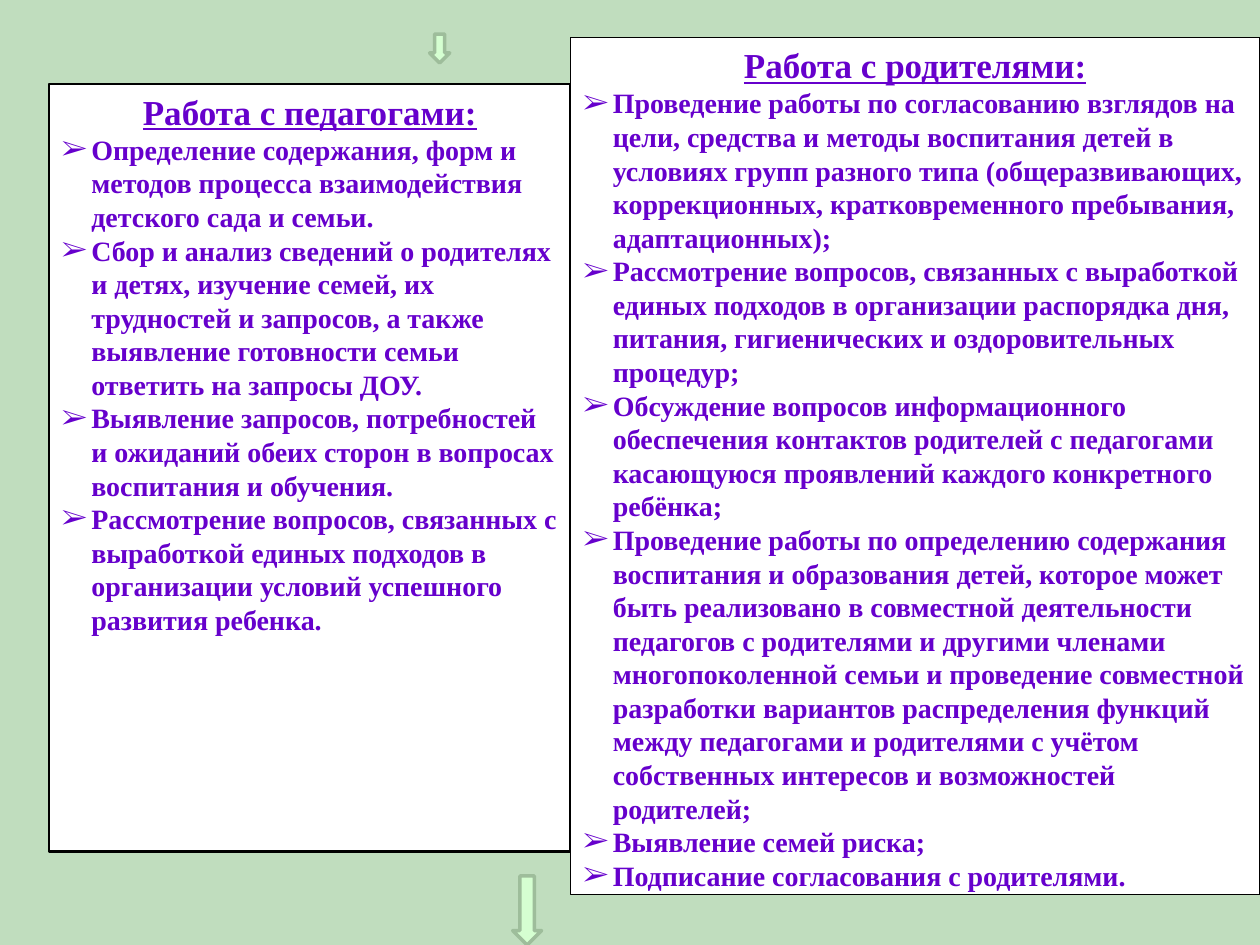
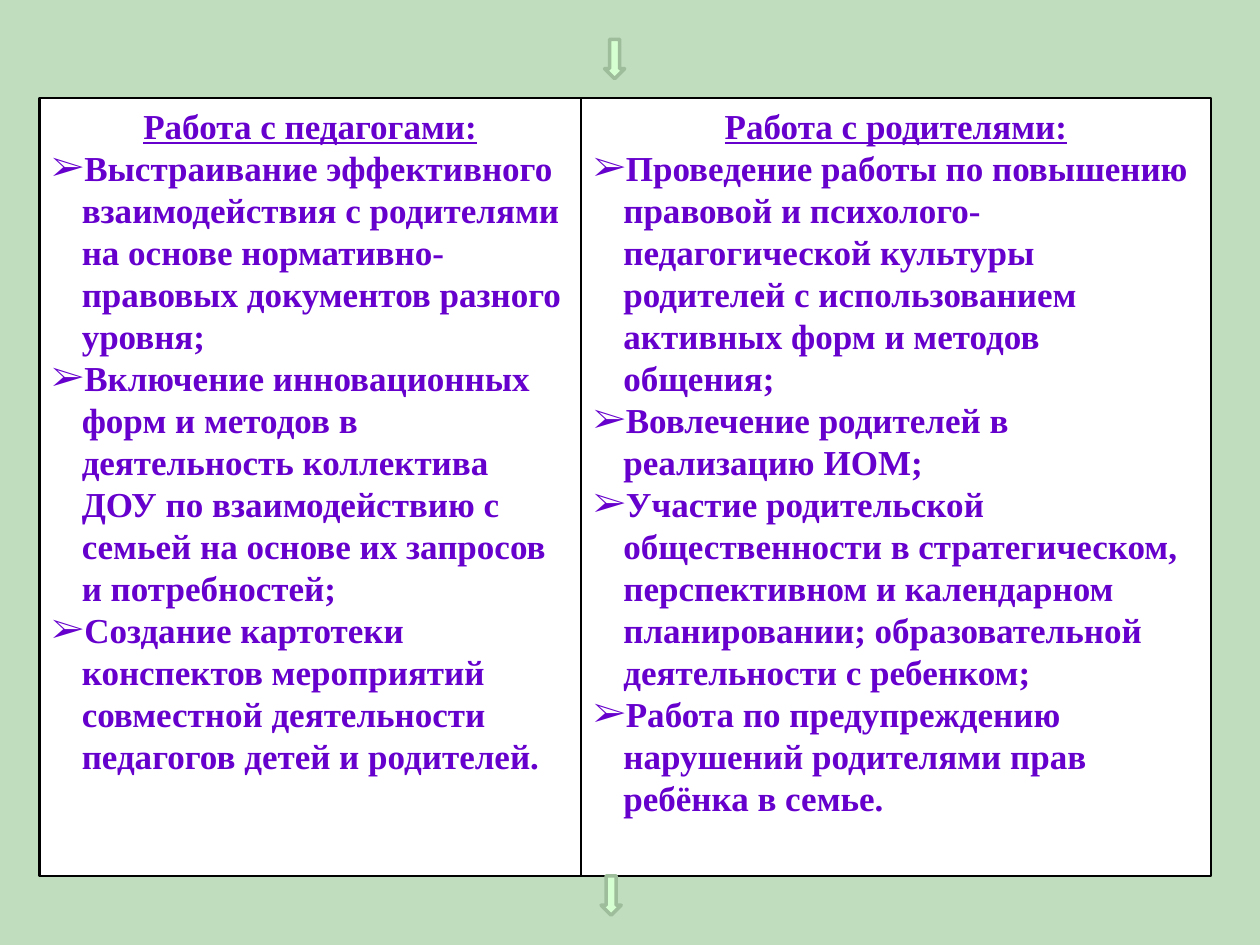
import pptx
import pptx.util
import pptx.dml.color
import pptx.enum.shapes
import pptx.enum.text
import lxml.etree
from pptx.oxml.ns import qn

Pt = pptx.util.Pt
RGBColor = pptx.dml.color.RGBColor
PP_ALIGN = pptx.enum.text.PP_ALIGN

BACKGROUND = RGBColor(0xC0, 0xDD, 0xBE)
WHITE = RGBColor(0xFF, 0xFF, 0xFF)
BLACK = RGBColor(0, 0, 0)
PURPLE = RGBColor(0x66, 0x00, 0xCC)
ARROW_FILL = RGBColor(0xD5, 0xFF, 0xD1)
ARROW_LINE = RGBColor(0x9E, 0xBD, 0x9B)

TEACHERS = "Работа с педагогами:"
PARENTS = "Работа с родителями:"
BULLET = "➢"
INDENT = Pt(17)
TEXT_FONT = {"name": "Times New Roman", "bold": True}
HEADING_FONT = {**TEXT_FONT, "size": Pt(20), "underline": True}
FRAME_FORMAT = {
    "margin_left": Pt(7.2), "margin_right": Pt(7.2),
    "margin_top": Pt(3.6), "margin_bottom": Pt(3.6),
    "word_wrap": True,
    "auto_size": pptx.enum.text.MSO_AUTO_SIZE.NONE,
    "vertical_anchor": pptx.enum.text.MSO_ANCHOR.TOP,
}
PARAGRAPH_FORMAT = {"space_before": Pt(0), "space_after": Pt(0), "line_spacing": 1.0}

SLIDES = [
    {
        "size": 16,
        "panels": [
            {"heading": TEACHERS, "box": (28, 48, 298, 438.5), "border": 1.5, "items": [
                "Определение содержания, форм и методов процесса взаимодействия детского сада и семьи.",
                "Сбор и анализ сведений о родителях и детях, изучение семей, их трудностей и запросов, "
                "а также выявление готовности семьи ответить на запросы ДОУ.",
                "Выявление запросов, потребностей и ожиданий обеих сторон в вопросах воспитания и обучения.",
                "Рассмотрение вопросов, связанных с выработкой единых подходов в организации условий "
                "успешного развития ребенка.",
            ]},
            {"heading": PARENTS, "box": (326, 21.5, 394, 489.5), "border": 0.75, "items": [
                "Проведение работы по согласованию взглядов на цели, средства и методы воспитания детей "
                "в условиях групп разного типа (общеразвивающих, коррекционных, кратковременного "
                "пребывания, адаптационных);",
                "Рассмотрение вопросов, связанных с выработкой единых подходов в организации распорядка "
                "дня, питания, гигиенических и оздоровительных процедур;",
                "Обсуждение вопросов информационного обеспечения контактов родителей с педагогами "
                "касающуюся проявлений каждого конкретного ребёнка;",
                "Проведение работы по определению содержания воспитания и образования детей, которое "
                "может быть реализовано в совместной деятельности педагогов с родителями и другими "
                "членами многопоколенной семьи и проведение совместной разработки вариантов "
                "распределения функций между педагогами и родителями с учётом собственных интересов "
                "и возможностей родителей;",
                "Выявление семей риска;",
                "Подписание согласования с родителями.",
            ]},
        ],
        "arrows": [(245.5, 19.5, 11.5, 16.5), (293, 500.5, 16.5, 39.5)],
    },
    {
        "size": 20,
        "panels": [
            {"heading": TEACHERS, "box": (22.5, 56, 309.5, 444.5), "border": 1.5, "items": [
                "Выстраивание эффективного взаимодействия с родителями на основе нормативно- правовых "
                "документов разного уровня;",
                "Включение инновационных форм и методов в деятельность коллектива ДОУ по взаимодействию "
                "с семьей на основе их запросов и потребностей;",
                "Создание картотеки конспектов мероприятий совместной деятельности педагогов детей "
                "и родителей.",
            ]},
            {"heading": PARENTS, "box": (332, 56, 360, 444.5), "border": 1.5, "items": [
                "Проведение работы по повышению правовой и психолого-педагогической культуры родителей "
                "с использованием активных форм и методов общения;",
                "Вовлечение родителей в реализацию ИОМ;",
                "Участие родительской общественности в стратегическом, перспективном и календарном "
                "планировании; образовательной деятельности с ребенком;",
                "Работа по предупреждению нарушений родителями прав ребёнка в семье.",
            ]},
        ],
        "arrows": [(345.5, 22.5, 11.5, 22.5), (343.5, 500.5, 11.5, 22.5)],
    },
]


def apply(target, formats):
    for name, value in formats.items():
        setattr(target, name, value)


def paint(sp, fill, line, width):
    sp.fill.solid()
    sp.fill.fore_color.rgb = fill
    sp.line.color.rgb = line
    sp.line.width = Pt(width)


def write(p, text, font, align, bullet=None):
    apply(p, {**PARAGRAPH_FORMAT, "alignment": align})
    pPr = p._p.get_or_add_pPr()
    indent = INDENT if bullet else 0
    pPr.set("marL", str(indent))
    pPr.set("indent", str(-indent))
    if bullet:
        lxml.etree.SubElement(pPr, qn("a:buFont"), typeface=TEXT_FONT["name"])
        lxml.etree.SubElement(pPr, qn("a:buChar"), char=bullet)
    else:
        lxml.etree.SubElement(pPr, qn("a:buNone"))
    r = p.add_run()
    r.text = text
    apply(r.font, font)
    r.font.color.rgb = PURPLE


def fill_panel(sp, panel, size):
    apply(sp, dict(zip(("left", "top", "width", "height"), map(Pt, panel["box"]))))
    paint(sp, WHITE, BLACK, panel["border"])
    tf = sp.text_frame
    apply(tf, FRAME_FORMAT)
    write(tf.paragraphs[0], panel["heading"], HEADING_FONT, PP_ALIGN.CENTER)
    for item in panel["items"]:
        write(tf.add_paragraph(), item, {**TEXT_FONT, "size": Pt(size)}, PP_ALIGN.LEFT, BULLET)


def add_arrow(s, box):
    sp = s.shapes.add_shape(pptx.enum.shapes.MSO_SHAPE.DOWN_ARROW, *map(Pt, box))
    sp.shadow.inherit = False
    paint(sp, ARROW_FILL, ARROW_LINE, 2)


def main():
    prs = pptx.Presentation()
    prs.slide_width, prs.slide_height = Pt(720), Pt(540)
    fill = prs.slide_master.background.fill
    fill.solid()
    fill.fore_color.rgb = BACKGROUND
    layout = prs.slide_layouts.get_by_name("Two Content")
    for content in SLIDES:
        s = prs.slides.add_slide(layout)
        title = s.shapes.title
        title.element.getparent().remove(title.element)
        for sp, panel in zip(s.placeholders, content["panels"]):
            fill_panel(sp, panel, content["size"])
        for box in content["arrows"]:
            add_arrow(s, box)
    prs.save("out.pptx")


if __name__ == "__main__":
    main()
